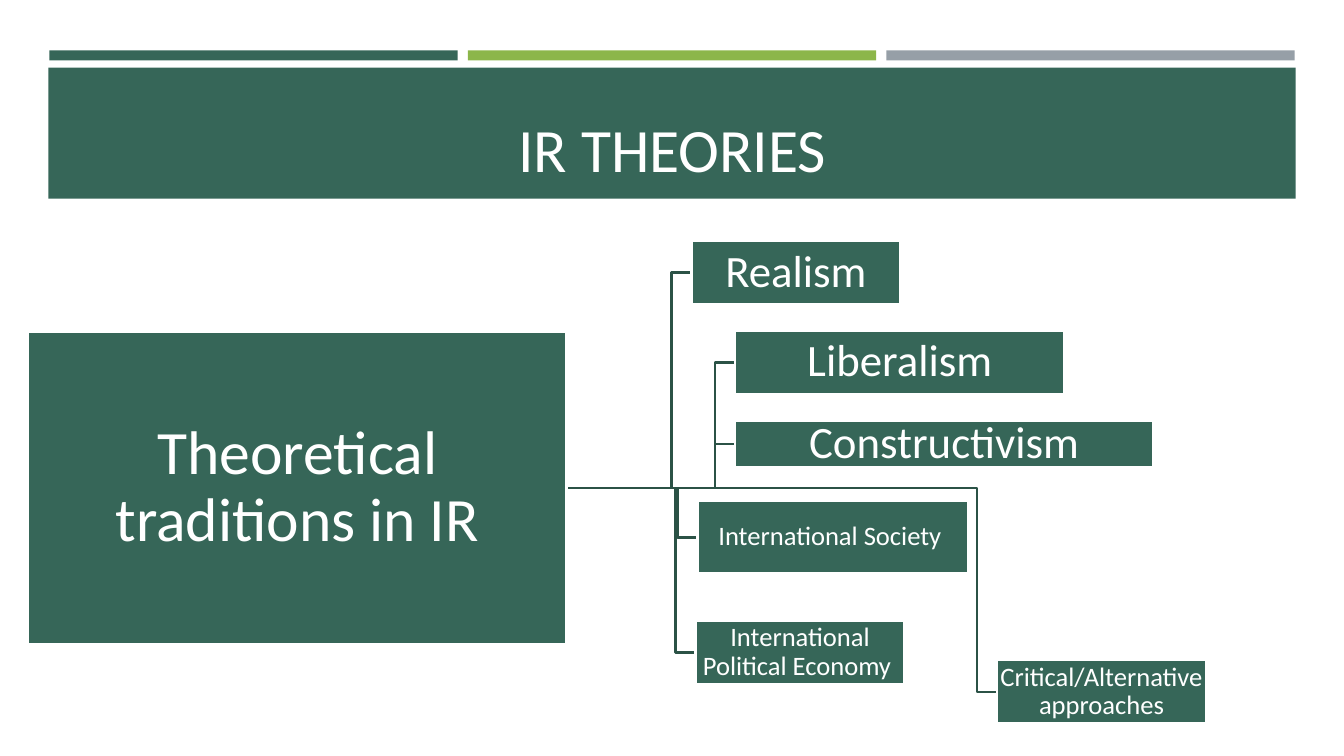
from pptx import Presentation
from pptx.dml.color import RGBColor
from pptx.enum.shapes import MSO_SHAPE
from pptx.enum.text import MSO_ANCHOR, MSO_AUTO_SIZE, PP_ALIGN
from pptx.util import Inches, Pt

GREEN, LIME, GREY = "366658", "8CB64A", "969FA7"
BRANCH, WHITE = "2B5246", "FFFFFF"
ROOT = ("Theoretical traditions in IR", 0.28, 3.29, 5.34, 3.1, 44, 0.03)
THEORIES = [
    ("Critical/Alternative approaches", 9.89, 6.55, 2.07, 0.63, 19, 0.01),
    ("International Political Economy ", 6.9, 6.16, 2.07, 0.63, 19, 0.01),
    ("International Society ", 6.92, 4.97, 2.68, 0.72, 19, 0.01),
    ("Constructivism", 7.29, 4.17, 4.15, 0.47, 32, 0.02),
    ("Liberalism", 7.29, 3.28, 3.27, 0.63, 32, 0.02),
    ("Realism", 6.86, 2.39, 2.07, 0.63, 32, 0.02),
]


def colour(value):
    """Turn a hex string into a colour."""
    return RGBColor.from_string(value)


def write(shape, text, size, anchor):
    """Put centred white text in a shape."""
    frame = shape.text_frame
    frame.text = text
    frame.word_wrap = True
    frame.auto_size = MSO_AUTO_SIZE.NONE
    frame.vertical_anchor = anchor
    para = frame.paragraphs[0]
    para.alignment = PP_ALIGN.CENTER
    para.line_spacing = 0.9
    font = para.runs[0].font
    font.name = "Calibri"
    font.size = Pt(size)
    font.color.rgb = colour(WHITE)


def add_bar(page, left, top, width, height, fill):
    """Add a plain filled rectangle."""
    bar = page.shapes.add_shape(
        MSO_SHAPE.RECTANGLE, Inches(left), Inches(top), Inches(width), Inches(height))
    bar.shadow.inherit = False
    bar.fill.solid()
    bar.fill.fore_color.rgb = colour(fill)
    bar.line.fill.background()
    return bar


def add_node(page, text, left, top, width, height, size, inset):
    """Add a white-edged box of the hierarchy."""
    box = add_bar(page, left, top, width, height, GREEN)
    box.line.color.rgb = colour(WHITE)
    box.line.width = Pt(1.75)
    write(box, text, size, MSO_ANCHOR.MIDDLE)
    frame = box.text_frame
    frame.margin_left = frame.margin_right = Inches(inset)
    frame.margin_top = frame.margin_bottom = Inches(inset)


def add_branch(page, left, top, height):
    """Draw the elbow line from the root box to a theory box."""
    root_left, root_top, root_width, root_height = ROOT[1:5]
    start_x, start_y = root_left + root_width, root_top + root_height / 2
    bend, end_y = left - 0.2, top + height / 2
    builder = page.shapes.build_freeform(Inches(start_x), Inches(start_y))
    corners = [(bend, start_y), (bend, end_y), (left, end_y)]
    builder.add_line_segments([(Inches(x), Inches(y)) for x, y in corners], close=False)
    branch = builder.convert_to_shape()
    branch.shadow.inherit = False
    branch.fill.background()
    branch.line.color.rgb = colour(BRANCH)
    branch.line.width = Pt(1.75)


def add_title(page, text):
    """Place the title in front of its band."""
    title = page.shapes.title
    title.left, title.top = Inches(0.64), Inches(0.77)
    title.width, title.height = Inches(12.06), Inches(1.11)
    write(title, text, 44, MSO_ANCHOR.BOTTOM)
    title.text_frame.paragraphs[0].line_spacing = 1.0
    tree = title.element.getparent()
    tree.append(title.element)


def main():
    """Build the slide and save it."""
    deck = Presentation()
    deck.slide_width, deck.slide_height = Inches(13.33), Inches(7.5)
    page = deck.slides.add_slide(deck.slide_layouts[5])
    for index, fill in enumerate([GREEN, LIME, GREY]):
        add_bar(page, 0.49 + 4.15 * index, 0.5, 4.05, 0.1, fill)
    add_bar(page, 0.48, 0.67, 12.37, 1.3, GREEN)
    add_title(page, "IR THEORIES")
    for _, left, top, _, height, _, _ in THEORIES:
        add_branch(page, left, top, height)
    for node in [ROOT] + THEORIES:
        add_node(page, *node)
    deck.save("out.pptx")


if __name__ == "__main__":
    main()
